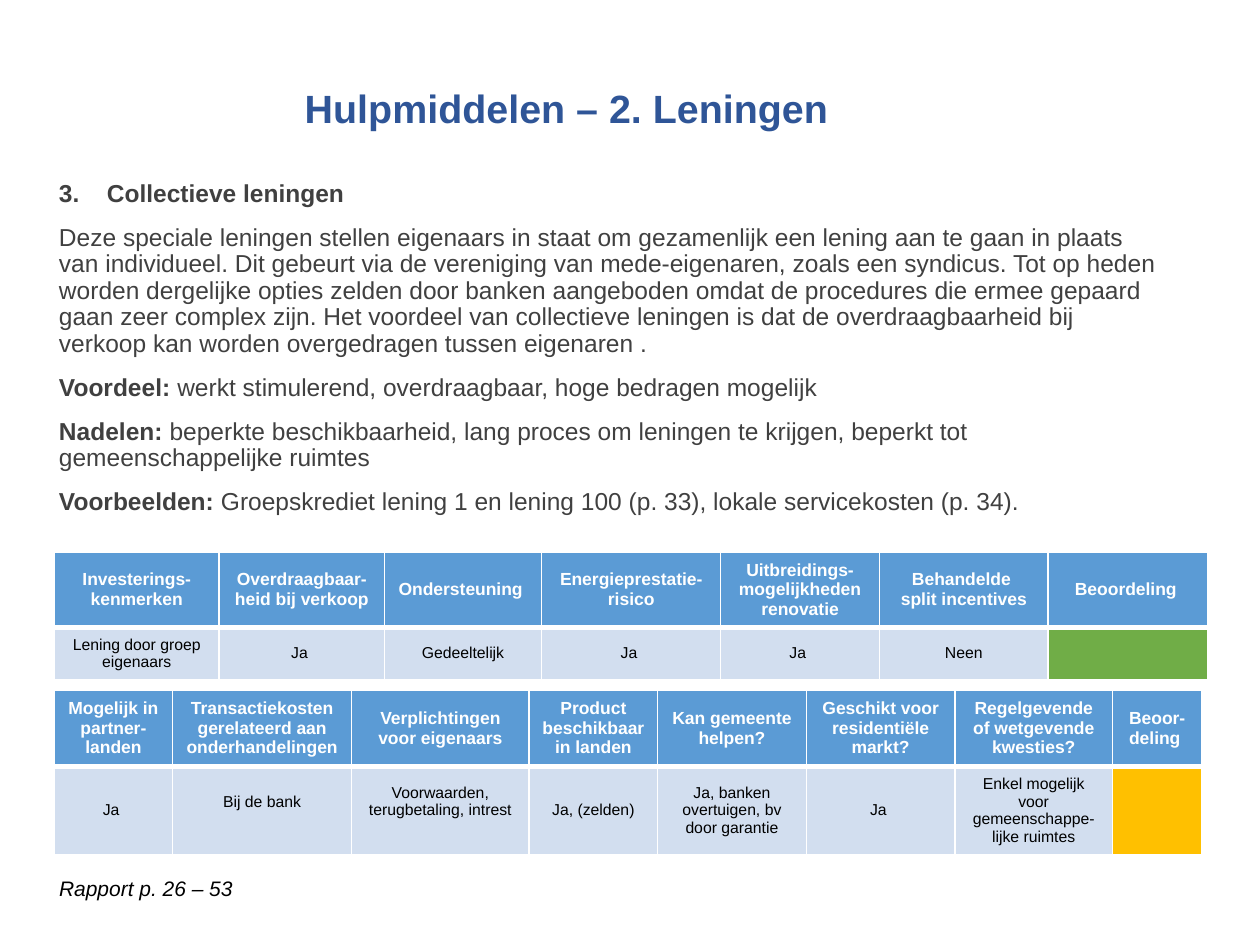
from lxml.etree import SubElement
from pptx import Presentation
from pptx.dml.color import RGBColor
from pptx.enum.text import MSO_ANCHOR, MSO_AUTO_SIZE, PP_ALIGN
from pptx.oxml.ns import qn
from pptx.util import Inches, Pt

FONT = "Arial"
BLACK = RGBColor(0x00, 0x00, 0x00)
WHITE = RGBColor(0xFF, 0xFF, 0xFF)
GREY = RGBColor(0x40, 0x40, 0x40)
NAVY = RGBColor(0x2F, 0x55, 0x97)
BLUE = RGBColor(0x5B, 0x9B, 0xD5)
PALE_BLUE = RGBColor(0xD2, 0xDE, 0xEF)
GREEN = RGBColor(0x70, 0xAD, 0x47)
AMBER = RGBColor(0xFF, 0xC0, 0x00)

BODY = [
    ("Collectieve leningen", ""),
    ("", "Deze speciale leningen stellen eigenaars in staat om gezamenlijk een lening aan te gaan "
         "in plaats van individueel. Dit gebeurt via de vereniging van mede-eigenaren, zoals een "
         "syndicus. Tot op heden worden dergelijke opties zelden door banken aangeboden omdat de "
         "procedures die ermee gepaard gaan zeer complex zijn. Het voordeel van collectieve "
         "leningen is dat de overdraagbaarheid bij verkoop kan worden overgedragen tussen "
         "eigenaren ."),
    ("Voordeel: ", "werkt stimulerend, overdraagbaar, hoge bedragen mogelijk"),
    ("Nadelen:", " beperkte beschikbaarheid, lang proces om leningen te krijgen, beperkt tot "
                 "gemeenschappelijke ruimtes"),
    ("Voorbeelden:", " Groepskrediet lening 1 en lening 100 (p. 33), "
                     "lokale servicekosten (p. 34)."),
]

LOAN_COLUMNS = [
    (1.31, "Investerings-kenmerken", "Lening door groep eigenaars"),
    (1.31, "Overdraagbaar-heid bij verkoop", "Ja "),
    (1.25, "Ondersteuning ", "Gedeeltelijk"),
    (1.42, "Energieprestatie-risico", "Ja "),
    (1.26, "Uitbreidings-mogelijkheden renovatie", "Ja "),
    (1.34, "Behandelde \nsplit incentives", "Neen"),
    (1.27, "Beoordeling ", ""),
]

MARKET_COLUMNS = [
    (0.94, "Mogelijk in partner-landen", "Ja "),
    (1.42, "Transactiekosten gerelateerd aan onderhandelingen", "Bij de bank"),
    (1.41, "Verplichtingen voor eigenaars", "Voorwaarden, terugbetaling, intrest"),
    (1.02, "Product beschikbaar in landen", "Ja, (zelden)"),
    (1.18, "Kan gemeente helpen?", "Ja, banken overtuigen, bv door garantie"),
    (1.18, "Geschikt voor residentiële markt?", "Ja "),
    (1.25, "Regelgevende of wetgevende kwesties?",
     "Enkel mogelijk voor gemeenschappe-lijke ruimtes"),
    (0.71, "Beoor-deling ", ""),
]
RAISED = ("Bij de bank", "Voorwaarden, terugbetaling, intrest")


class LoanSlide:
    """Holds the font and the slide, and adds each kind of element to it."""

    def __init__(self, slide, font_name):
        self.slide = slide
        self.font_name = font_name

    def style(self, font, size, color, bold=False, italic=False):
        font.name = self.font_name
        font.size = Pt(size)
        font.color.rgb = color
        font.bold = bold
        font.italic = italic

    def text_frame(self, left, top, width, height):
        shape = self.slide.shapes.add_textbox(
            Inches(left), Inches(top), Inches(width), Inches(height))
        shape.text_frame.word_wrap = True
        return shape.text_frame

    def line(self, box, text, size, color, bold=False, italic=False):
        text_frame = self.text_frame(*box)
        text_frame.text = text
        self.style(text_frame.paragraphs[0].runs[0].font, size, color, bold, italic)
        return text_frame

    def number(self, paragraph, start, indent):
        properties = paragraph._p.get_or_add_pPr()
        properties.set("marL", str(Inches(indent)))
        properties.set("indent", str(-Inches(indent)))
        SubElement(properties, qn("a:buFont"), typeface="+mj-lt")
        SubElement(properties, qn("a:buAutoNum"), type="arabicPeriod", startAt=str(start))

    def body(self, box, entries, size, color):
        text_frame = self.text_frame(*box)
        for index, parts in enumerate(entries):
            paragraph = text_frame.add_paragraph() if index else text_frame.paragraphs[0]
            if index:
                paragraph.space_before = Pt(10)
            paragraph.line_spacing = 0.9
            for text, bold in zip(parts, (True, False)):
                if text:
                    run = paragraph.add_run()
                    run.text = text
                    self.style(run.font, size, color, bold)
        self.number(text_frame.paragraphs[0], 3, 0.38)

    def borders(self, cell, top, bottom):
        properties = cell._tc.get_or_add_tcPr()
        for side, width in (("L", 1), ("R", 1), ("T", top), ("B", bottom)):
            border = SubElement(properties, qn(f"a:ln{side}"), w=str(Pt(width)))
            fill = SubElement(border, qn("a:solidFill"))
            SubElement(fill, qn("a:srgbClr"), val=str(WHITE))

    def cell(self, cell, text, fill, size, color, bold):
        cell.fill.solid()
        cell.fill.fore_color.rgb = fill
        cell.vertical_anchor = MSO_ANCHOR.MIDDLE
        cell.text = text
        if text in RAISED:
            cell.margin_bottom = Inches(0.19)
        for paragraph in cell.text_frame.paragraphs:
            paragraph.alignment = PP_ALIGN.CENTER
            for run in paragraph.runs:
                self.style(run.font, size, color, bold)

    def table(self, left, top, row_heights, columns, rating):
        width = sum(column[0] for column in columns)
        table = self.slide.shapes.add_table(
            2, len(columns), Inches(left), Inches(top),
            Inches(width), Inches(sum(row_heights))).table
        for row, height in zip(table.rows, row_heights):
            row.height = Inches(height)
        for index, (column_width, heading, value) in enumerate(columns):
            table.columns[index].width = Inches(column_width)
            header, answer = table.cell(0, index), table.cell(1, index)
            self.borders(header, 1, 3)
            self.borders(answer, 3, 1)
            self.cell(header, heading, BLUE, 10, WHITE, True)
            self.cell(answer, value, PALE_BLUE if value else rating, 9, BLACK, False)


def main():
    presentation = Presentation()
    presentation.slide_width = Inches(10)
    presentation.slide_height = Inches(7.5)
    slide = presentation.slides.add_slide(presentation.slide_layouts[6])
    loans = LoanSlide(slide, FONT)

    loans.body((0.37, 1.39, 8.94, 4.3), BODY, 14, GREY)
    title = loans.line((2.32, 0.6, 6.28, 0.56), "Hulpmiddelen – 2. Leningen", 22.5, NAVY, bold=True)
    title.vertical_anchor = MSO_ANCHOR.MIDDLE
    title.paragraphs[0].line_spacing = 0.9
    report = loans.line((0.37, 6.9, 2.32, 0.3), "Rapport p. 26 – 53", 12, BLACK, italic=True)
    report.auto_size = MSO_AUTO_SIZE.SHAPE_TO_FIT_TEXT

    loans.table(0.43, 4.38, (0.6, 0.41), LOAN_COLUMNS, GREEN)
    loans.table(0.43, 5.48, (0.6, 0.7), MARKET_COLUMNS, AMBER)
    presentation.save("out.pptx")


if __name__ == "__main__":
    main()
